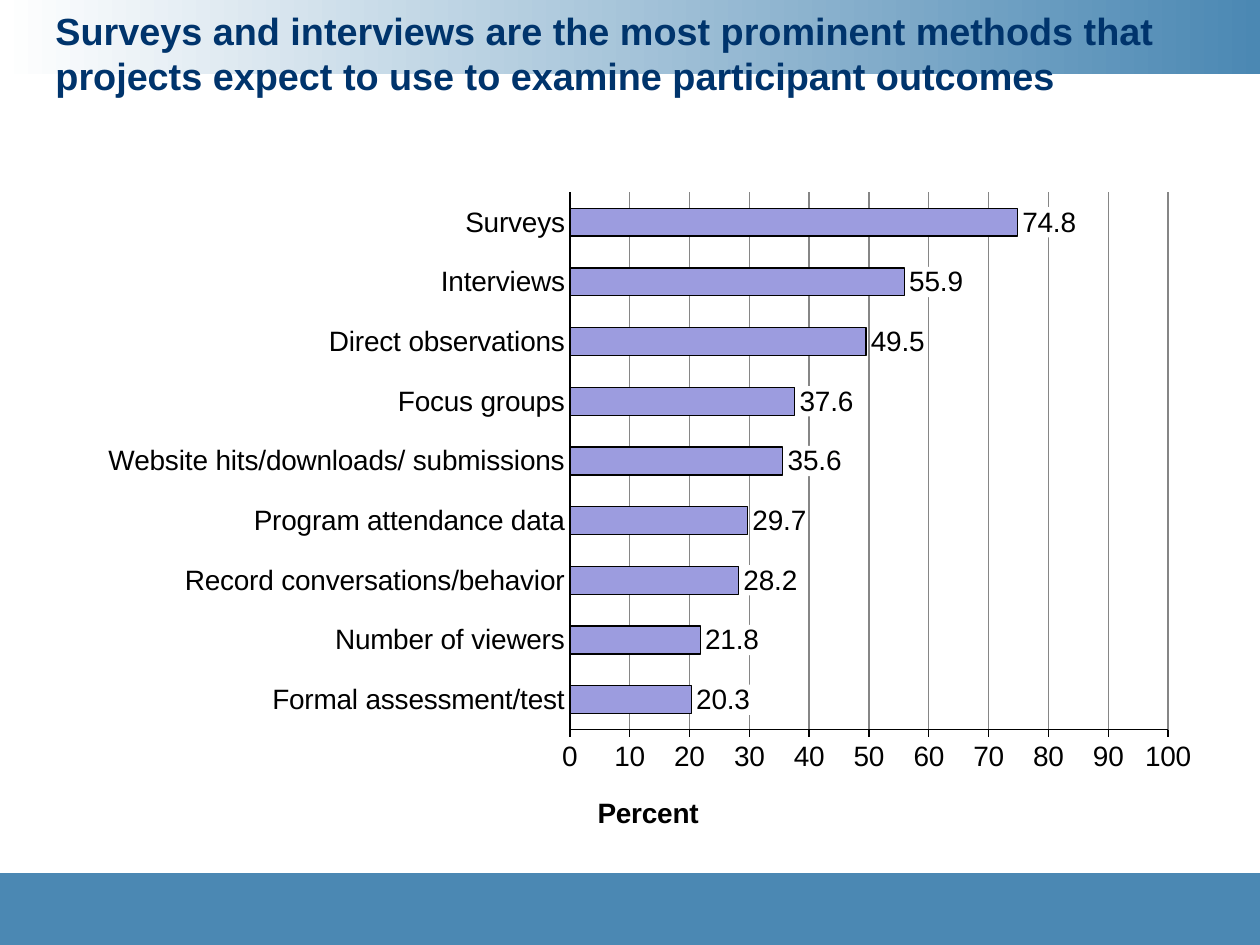
from dataclasses import dataclass

from lxml.etree import SubElement
from pptx import Presentation
from pptx.chart.data import CategoryChartData
from pptx.dml.color import RGBColor
from pptx.enum.chart import XL_CHART_TYPE, XL_LABEL_POSITION, XL_TICK_MARK
from pptx.enum.shapes import MSO_SHAPE
from pptx.enum.text import MSO_ANCHOR, PP_ALIGN
from pptx.oxml import parse_xml
from pptx.oxml.ns import nsdecls, qn
from pptx.util import Inches, Pt

FONT = "Arial"
WHITE, BLACK, BLUE, NAVY = "FFFFFF", "000000", "4B88B3", "00346C"
LILAC, GREY = "9C9CDF", "868686"


@dataclass
class Band:
    top: float
    height: float
    colors: tuple[str, ...]


@dataclass
class Method:
    name: str
    percent: float


BANDS = [Band(0, 0.59, (WHITE, BLUE)), Band(6.93, 0.57, (BLUE,))]
METHODS = [
    Method("Surveys", 74.8),
    Method("Interviews", 55.9),
    Method("Direct observations", 49.5),
    Method("Focus groups", 37.6),
    Method("Website hits/downloads/ submissions", 35.6),
    Method("Program attendance data", 29.7),
    Method("Record conversations/behavior", 28.2),
    Method("Number of viewers", 21.8),
    Method("Formal assessment/test", 20.3),
]


def rgb(color: str) -> RGBColor:
    return RGBColor.from_string(color)


def set_font(font, size: float, color: str, bold: bool = False) -> None:
    font.name = FONT
    font.size = Pt(size)
    font.bold = bold
    font.color.rgb = rgb(color)


def set_line(line, color: str, width: float = 0.75) -> None:
    line.color.rgb = rgb(color)
    line.width = Pt(width)


def add_band(page, band: Band) -> None:
    box = page.shapes.add_shape(
        MSO_SHAPE.RECTANGLE, 0, Inches(band.top), Inches(10), Inches(band.height))
    box.shadow.inherit = False
    box.line.fill.background()
    if len(band.colors) == 1:
        box.fill.solid()
        box.fill.fore_color.rgb = rgb(band.colors[0])
    else:
        box.fill.gradient()
        box.fill.gradient_angle = 0
        for stop, color in zip(box.fill.gradient_stops, band.colors):
            stop.color.rgb = rgb(color)


def add_title(page, text: str) -> None:
    title = page.shapes.title
    title.left, title.top = Inches(0.34), Inches(0.01)
    title.width, title.height = Inches(9.67), Inches(1.17)
    frame = title.text_frame
    frame.text = text
    frame.word_wrap = True
    frame.vertical_anchor = MSO_ANCHOR.TOP
    para = frame.paragraphs[0]
    para.alignment = PP_ALIGN.LEFT
    set_font(para.font, 21.6, NAVY, bold=True)
    page.shapes._spTree.append(title._element)


def place(layout, **values) -> None:
    for child in list(layout):
        layout.remove(child)
    manual = SubElement(layout, qn("c:manualLayout"))
    for name, value in values.items():
        SubElement(manual, qn(f"c:{name}")).set("val", str(value))


def add_methods_chart(page, methods: list[Method]) -> None:
    rows = methods[::-1]
    data = CategoryChartData(number_format="General")
    data.categories = [row.name for row in rows]
    data.add_series("Series 1", [row.percent for row in rows])
    chart = page.shapes.add_chart(
        XL_CHART_TYPE.BAR_CLUSTERED,
        Inches(0.67), Inches(1.42), Inches(8.96), Inches(5.33), data).chart
    chart.has_legend = False
    chart.has_title = False
    set_font(chart.font, 16, BLACK)

    plot = chart.plots[0]
    plot.gap_width = 114
    plot.vary_by_categories = False
    bars = plot.series[0]
    bars.format.fill.solid()
    bars.format.fill.fore_color.rgb = rgb(LILAC)
    set_line(bars.format.line, BLACK)

    labels = bars.data_labels
    labels.show_value = True
    labels.position = XL_LABEL_POSITION.OUTSIDE_END
    labels.number_format = "0.0"
    labels.number_format_is_linked = False
    set_font(labels.font, 16, BLACK)
    labels._element.find(qn("c:numFmt")).addnext(parse_xml(
        f'<c:spPr {nsdecls("c", "a")}><a:solidFill><a:srgbClr val="{WHITE}"/>'
        "</a:solidFill></c:spPr>"))

    for axis, tick in ((chart.category_axis, XL_TICK_MARK.NONE),
                       (chart.value_axis, XL_TICK_MARK.OUTSIDE)):
        axis.major_tick_mark = tick
        axis.minor_tick_mark = XL_TICK_MARK.NONE
        set_line(axis.format.line, BLACK)
        set_font(axis.tick_labels.font, 16, BLACK)

    scale = chart.value_axis
    scale.minimum_scale, scale.maximum_scale, scale.major_unit = 0, 100, 10
    scale.has_major_gridlines = True
    set_line(scale.major_gridlines.format.line, GREY)
    title = scale.axis_title
    title.text_frame.text = "Percent"
    set_font(title.text_frame.paragraphs[0].font, 16, BLACK, bold=True)

    place(title._element.get_or_add_layout() if hasattr(title._element, "get_or_add_layout")
          else title._element.find(qn("c:layout")),
          xMode="edge", yMode="edge", x=0.45, y=0.91)
    area = chart._chartSpace.chart.plotArea
    layout = area.find(qn("c:layout"))
    if layout is None:
        layout = parse_xml(f'<c:layout {nsdecls("c")}/>')
        area.insert(0, layout)
    place(layout, layoutTarget="inner", xMode="edge", yMode="edge",
          x=0.43, y=0.02, w=0.53, h=0.8)


def main() -> None:
    deck = Presentation()
    deck.slide_width, deck.slide_height = Inches(10), Inches(7.5)
    page = deck.slides.add_slide(deck.slide_layouts[5])
    for band in BANDS:
        add_band(page, band)
    add_title(page, "Surveys and interviews are the most prominent methods that "
                    "projects expect to use to examine participant outcomes")
    add_methods_chart(page, METHODS)
    deck.save("out.pptx")


if __name__ == "__main__":
    main()
